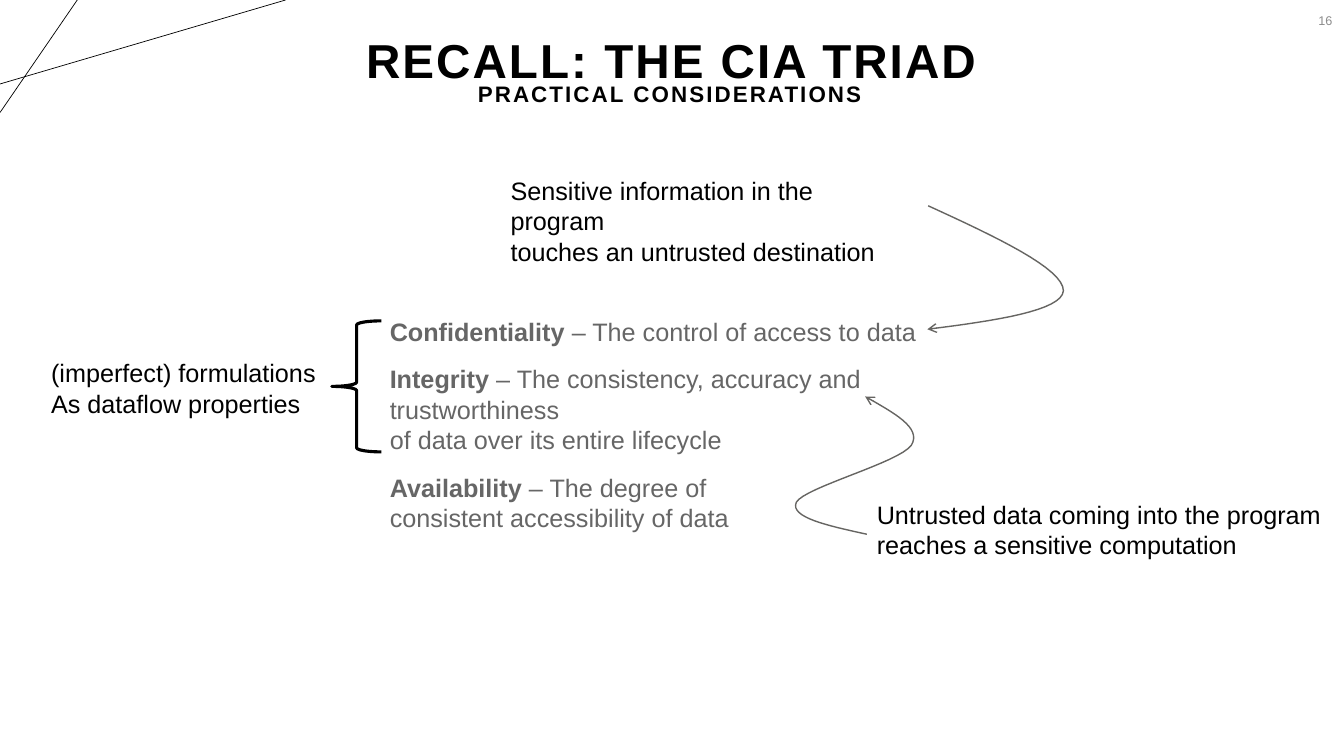
from lxml.etree import SubElement as Sub
from pptx import Presentation
from pptx.dml.color import RGBColor as Rgb
from pptx.enum.shapes import MSO_CONNECTOR as Link, MSO_SHAPE as Form
from pptx.enum.text import MSO_ANCHOR as Anchor, MSO_AUTO_SIZE as Fit, PP_ALIGN as Align
from pptx.oxml.ns import qn
from pptx.util import Inches, Pt

HUES = {"ink": "000000", "text": "666666", "page": "8C8C8C", "arrow": "666562"}
FONT = "Arial"
COLS, ROWS = 160, 90
STEPS = 16


class Board:
    """Hold the style and the slide, with lengths in columns and rows."""

    def __init__(self, deck):
        self.wide, self.high = deck.slide_width, deck.slide_height
        self.slide = deck.slides.add_slide(deck.slide_layouts[1])
        self.shapes = self.slide.shapes

    def spot(self, col, row):
        return round(col * self.wide / COLS), round(row * self.high / ROWS)

    def area(self, box):
        return *self.spot(*box[:2]), *self.spot(*box[2:])

    def place(self, shape, box):
        shape.left, shape.top, shape.width, shape.height = self.area(box)
        return shape

    def frame(self, shape, anchor=Anchor.TOP):
        frame = shape.text_frame
        frame.word_wrap = True
        frame.auto_size = Fit.NONE
        frame.vertical_anchor = anchor
        return frame

    def style(self, run, size, hue, bold=False):
        font = run.font
        font.name, font.size, font.bold = FONT, Pt(size), bold
        font.color.rgb = Rgb.from_string(HUES[hue])

    def stroke(self, line, hue, width):
        line.color.rgb = Rgb.from_string(HUES[hue])
        line.width = Pt(width)

    def fill(self, shape, text, size=18, hue="ink", bold=False,
             align=Align.LEFT, anchor=Anchor.TOP):
        frame = self.frame(shape, anchor)
        frame.text = text
        for para in frame.paragraphs:
            para.alignment = align
            for run in para.runs:
                self.style(run, size, hue, bold)
        return frame

    def note(self, box, text, **look):
        return self.fill(self.shapes.add_textbox(*self.area(box)), text, **look)

    def head(self, shape, text, size):
        frame = self.fill(shape, text, size, bold=True,
                          align=Align.CENTER, anchor=Anchor.MIDDLE)
        para = frame.paragraphs[0]
        para.line_spacing = 0.9
        para.runs[0].font._element.set("spc", "150")

    def title(self, box, text, size):
        self.head(self.place(self.shapes.title, box), text, size)

    def subtitle(self, box, text, size):
        self.head(self.shapes.add_textbox(*self.area(box)), text, size)

    def terms(self, box, rows):
        frame = self.frame(self.place(self.slide.placeholders[1], box))
        for num, (lead, rest) in enumerate(rows):
            para = frame.add_paragraph() if num else frame.paragraphs[0]
            para.text = lead
            para.add_run().text = rest
            for run in para.runs:
                self.style(run, 18, "text", run.text == lead)
            para.alignment = Align.LEFT
            para.space_before = Pt(12.5 if num and lead else 0)
            props = para._p.get_or_add_pPr()
            props.set("marL", "0")
            props.set("indent", "0")
            Sub(props, qn("a:buNone"))

    def line(self, start, end):
        line = self.shapes.add_connector(
            Link.STRAIGHT, *self.spot(*start), *self.spot(*end))
        self.stroke(line.line, "ink", 0.5)
        Sub(line._element.spPr, qn("a:effectLst"))

    def brace(self, box):
        brace = self.shapes.add_shape(Form.LEFT_BRACE, *self.area(box))
        brace.shadow.inherit = False
        brace.fill.background()
        self.stroke(brace.line, "ink", 2.25)

    def arrow(self, start, *bends):
        dots, last = [], start
        for bend in bends:
            knots = (last, *bend)
            for step in range(1, STEPS + 1):
                t = step / STEPS
                parts = ((1 - t) ** 3, 3 * t * (1 - t) ** 2, 3 * t * t * (1 - t), t ** 3)
                dots.append(self.spot(*(
                    sum(part * knot[axis] for part, knot in zip(parts, knots))
                    for axis in (0, 1))))
            last = bend[-1]
        pen = self.shapes.build_freeform(*self.spot(*start))
        pen.add_line_segments(dots, close=False)
        curve = pen.convert_to_shape()
        curve.shadow.inherit = False
        curve.fill.background()
        self.stroke(curve.line, "arrow", 1)
        Sub(curve._element.spPr.find(qn("a:ln")), qn("a:tailEnd"), type="arrow")


def main():
    deck = Presentation()
    deck.slide_width, deck.slide_height = Inches(13.33), Inches(7.5)
    board = Board(deck)
    board.line((0, 10), (34, 0))
    board.line((9.2, 0), (0, 13.4))
    board.note((123.8, 0, 36, 4.8), "16", size=9, hue="page",
               align=Align.RIGHT, anchor=Anchor.MIDDLE)
    board.title((0.1, -1.2, 159.7, 17.4), "RECALL: THE CIA TRIAD", 34)
    board.subtitle((-0.1, 2.6, 159.7, 17.4), "PRACTICAL CONSIDERATIONS", 16)
    board.terms((45.2, 37, 71.9, 27), (
        ("Confidentiality ", "– The control of access to data"),
        ("Integrity ", "– The consistency, accuracy and trustworthiness"),
        ("", "of data over its entire lifecycle"),
        ("Availability ", "– The degree of"),
        ("", "consistent accessibility of data")))
    board.brace((39.5, 38.2, 5.9, 15.6))
    board.note((4.9, 42, 34.4, 8.5), "(imperfect) formulations\nAs dataflow properties")
    board.arrow((110.5, 24.5),
                ((118.6, 28.2), (126.6, 32), (126.6, 34.6)),
                ((126.5, 37), (118.4, 38.2), (110.4, 39.2)))
    board.note((59.6, 20.3, 50, 8.5),
               "Sensitive information in the program\ntouches an untrusted destination")
    board.note((103.2, 58.8, 56, 8.5),
               "Untrusted data coming into the program\nreaches a sensitive computation")
    board.arrow((103.2, 63.6),
                ((98.6, 62.6), (94, 61.6), (94.8, 59.8)),
                ((95.8, 58), (107, 55.1), (108.5, 53)),
                ((109.8, 50.9), (106.3, 49.1), (103, 47.2)))
    deck.save("out.pptx")


if __name__ == "__main__":
    main()
